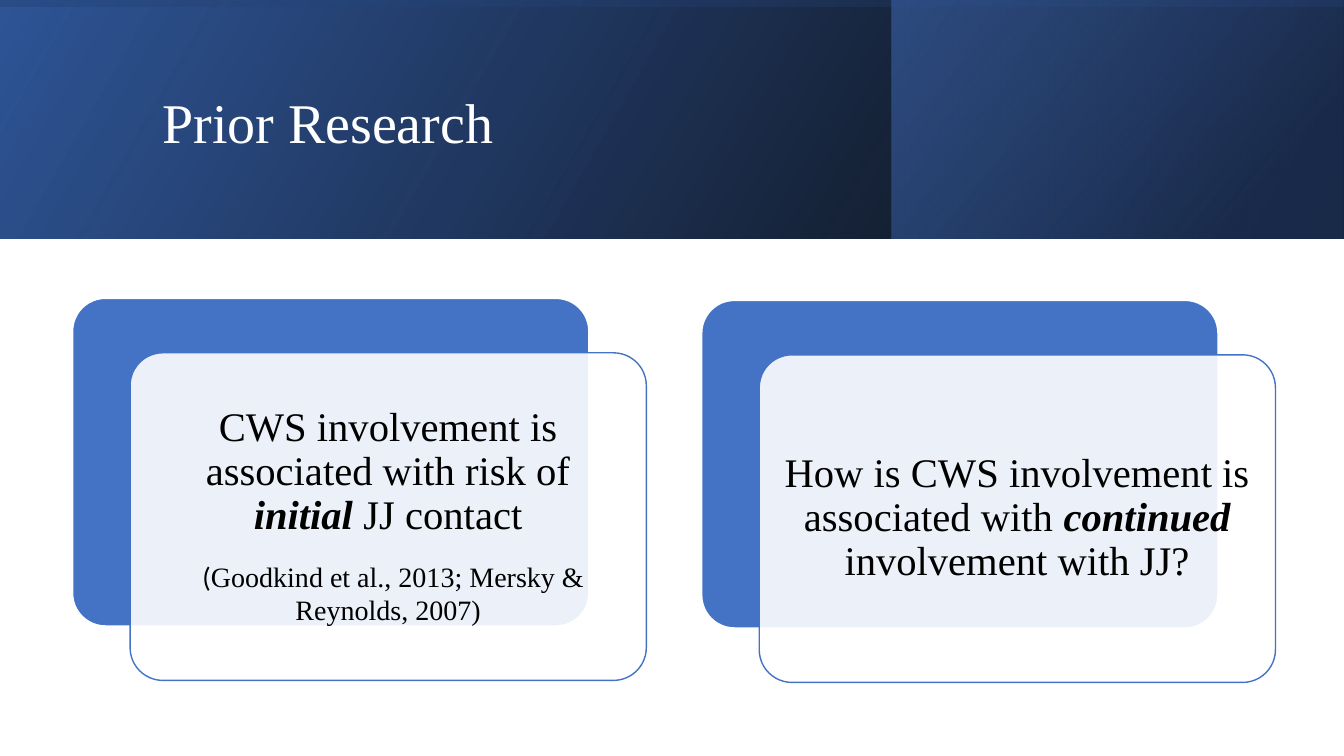
"""Build the Prior Research slide: a gradient header and two layered cards."""
from pptx import Presentation
from pptx.dml.color import RGBColor
from pptx.enum.shapes import MSO_SHAPE
from pptx.enum.text import MSO_ANCHOR, MSO_AUTO_SIZE, PP_ALIGN
from pptx.oxml import parse_xml
from pptx.oxml.ns import nsdecls, qn
from pptx.util import Inches, Pt

HUES = {"white": "FFFFFF", "black": "000000", "blue": "4472C4",
        "deep": "2F5597", "navy": "203864"}
SERIF = "Times New Roman"
HEAD = {"size": Pt(40), "name": SERIF}
BODY = {"size": Pt(29), "name": SERIF, "bold": False, "italic": False}
STRONG = {**BODY, "bold": True, "italic": True}
CITE = {**BODY, "size": Pt(20)}
MARK = {**CITE, "name": "Calibri"}
FRAME = {"word_wrap": True, "auto_size": MSO_AUTO_SIZE.NONE,
         "vertical_anchor": MSO_ANCHOR.MIDDLE}
INSET = {f"margin_{side}": Inches(0.12)
         for side in ("left", "top", "right", "bottom")}

BANDS = [
    ((0, 0, 13.33, 2.37), 0, 330, [(0, "black", 96), (100, "deep", 100)]),
    ((8.84, 0, 4.48, 2.37), 0, 320, [(19, "navy", 68), (100, "blue", 48)]),
    ((5.48, -5.48, 2.37, 13.33), 270, 350,
     [(23, "deep", 16), (99, "black", 45)]),
]
CARDS = [
    (0.72, 2.96, [
        [("CWS involvement is associated with risk of ", BODY),
         ("initial", STRONG), (" JJ contact", BODY)],
        [(" ", BODY), ("(", MARK),
         ("Goodkind et al., 2013; Mersky & Reynolds, 2007)", CITE)]]),
    (6.96, 2.98, [
        [("How is CWS involvement is associated with ", BODY),
         ("continued", STRONG), (" involvement with JJ?", BODY)]]),
]


def tint(name):
    """Return the named colour."""
    return RGBColor.from_string(HUES[name])


def style(item, form):
    """Set each value of a format dict on an object."""
    for key, value in form.items():
        setattr(item, key, value)


def add_run(para, text, form, hue):
    """Add a formatted run to a paragraph."""
    run = para.add_run()
    run.text = text
    style(run.font, form)
    run.font.color.rgb = tint(hue)


def add_box(slide, kind, box):
    """Add a preset shape without shadow."""
    shape = slide.shapes.add_shape(kind, *map(Inches, box))
    shape.shadow.inherit = False
    return shape


def add_band(slide, box, turn, angle, stops):
    """Add a mirrored rectangle with a translucent gradient."""
    band = add_box(slide, MSO_SHAPE.RECTANGLE, box)
    band.rotation = turn
    band.line.fill.background()
    marks = "".join(
        f'<a:gs pos="{pos * 1000}"><a:srgbClr val="{HUES[hue]}">'
        f'<a:alpha val="{alpha * 1000}"/></a:srgbClr></a:gs>'
        for pos, hue, alpha in stops)
    props = band._element.spPr
    props.find(qn("a:xfrm")).set("flipH", "1")
    props.insert(2, parse_xml(
        f'<a:gradFill {nsdecls("a")} rotWithShape="1"><a:gsLst>{marks}'
        f'</a:gsLst><a:lin ang="{angle * 60000}" scaled="0"/></a:gradFill>'))


def add_panel(slide, left, top, fill, line):
    """Add one rounded panel of a card."""
    panel = add_box(slide, MSO_SHAPE.ROUNDED_RECTANGLE,
                    (left, top, 5.12, 3.25))
    panel.adjustments[0] = 0.1
    panel.fill.solid()
    panel.fill.fore_color.rgb = tint(fill)
    panel.line.color.rgb = tint(line)
    panel.line.width = Pt(1)
    return panel


def add_card(slide, left, top, paras):
    """Add a blue panel and a translucent text panel over it."""
    add_panel(slide, left, top, "blue", "white")
    front = add_panel(slide, left + 0.57, top + 0.54, "white", "blue")
    shade = front._element.spPr.find(qn("a:solidFill"))[0]
    shade.append(parse_xml(f'<a:alpha {nsdecls("a")} val="90000"/>'))
    frame = front.text_frame
    style(frame, {**FRAME, **INSET})
    for spot, runs in enumerate(paras):
        para = frame.add_paragraph() if spot else frame.paragraphs[0]
        style(para, {"alignment": PP_ALIGN.CENTER, "line_spacing": 0.9,
                     "space_after": Pt(10)})
        for text, form in runs:
            add_run(para, text, form, "black")


def set_title(slide, text):
    """Place the title in front of the header bands."""
    title = slide.shapes.title
    style(title, {"left": Inches(1.51), "top": Inches(0.38),
                  "width": Inches(10.63), "height": Inches(1.72)})
    style(title.text_frame, FRAME)
    para = title.text_frame.paragraphs[0]
    style(para, {"alignment": PP_ALIGN.LEFT, "line_spacing": 0.9})
    add_run(para, text, HEAD, "white")
    slide.shapes._spTree.append(title._element)


def main():
    """Build and save the slide."""
    deck = Presentation()
    style(deck, {"slide_width": Inches(13.33), "slide_height": Inches(7.5)})
    slide = deck.slides.add_slide(deck.slide_layouts[5])
    for band in BANDS:
        add_band(slide, *band)
    set_title(slide, "Prior Research")
    for card in CARDS:
        add_card(slide, *card)
    deck.save("out.pptx")


if __name__ == "__main__":
    main()
